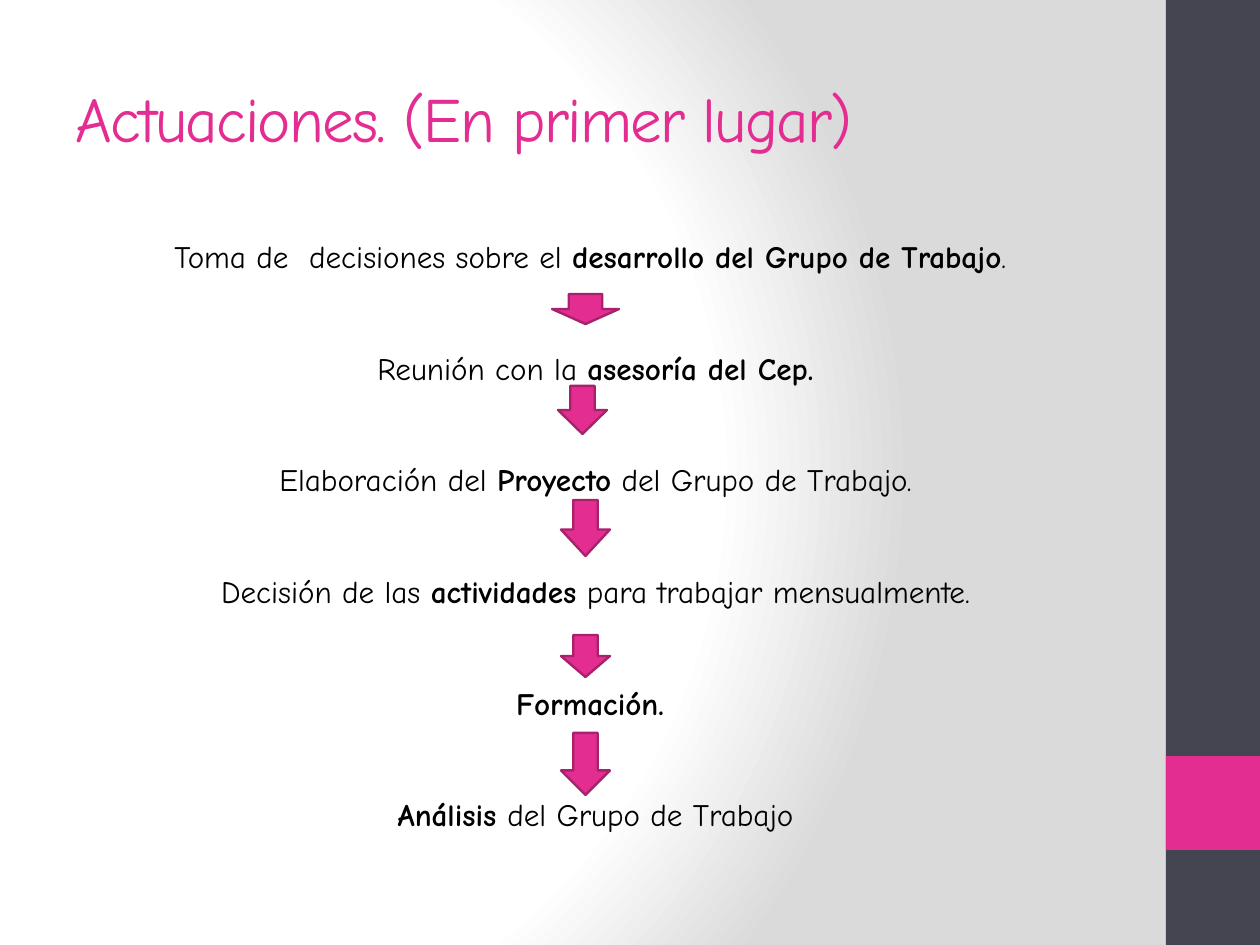
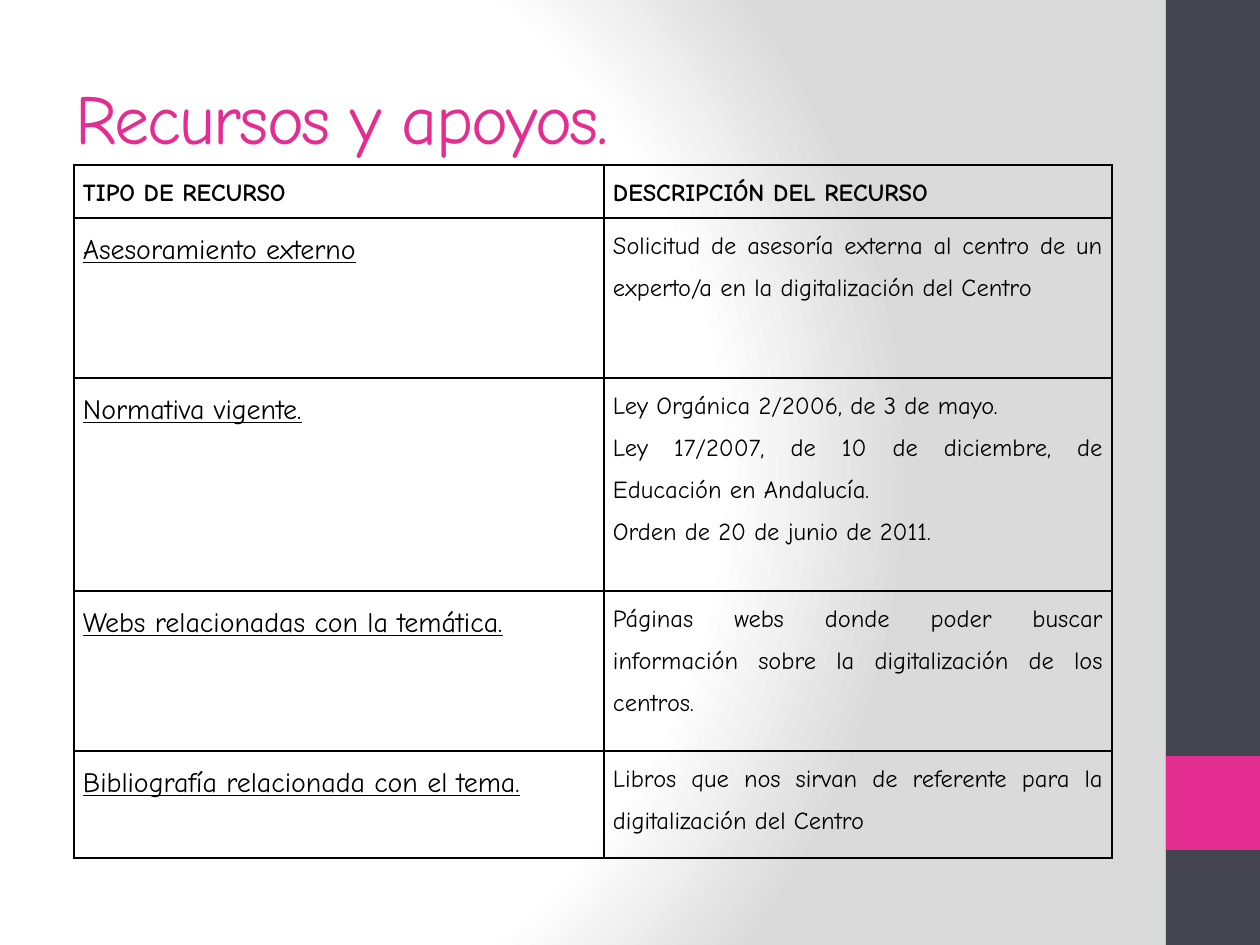
from pptx import Presentation
from pptx.dml.color import RGBColor
from pptx.enum.shapes import MSO_SHAPE
from pptx.enum.text import MSO_ANCHOR, MSO_AUTO_SIZE, PP_ALIGN
from pptx.oxml import parse_xml
from pptx.oxml.ns import nsdecls, qn
from pptx.util import Emu, Pt

RECTANGLE, DOWN_ARROW = MSO_SHAPE.RECTANGLE, MSO_SHAPE.DOWN_ARROW
LEFT, CENTER, JUSTIFY = PP_ALIGN.LEFT, PP_ALIGN.CENTER, PP_ALIGN.JUSTIFY
MIDDLE, TOP = MSO_ANCHOR.MIDDLE, MSO_ANCHOR.TOP
NO_AUTOFIT = MSO_AUTO_SIZE.NONE

PINK = RGBColor(0xE3, 0x2D, 0x91)
DARK_PINK = RGBColor(0xA8, 0x21, 0x6B)
SLATE = RGBColor(0x45, 0x45, 0x51)
BLACK = RGBColor(0, 0, 0)
WHITE = RGBColor(0xFF, 0xFF, 0xFF)
GREY = RGBColor(0xDA, 0xDA, 0xDA)
FONT = "Comic Neue"

# Content: a step is a list of (text, bold) spans
STEPS_TITLE = ("Actuaciones. (En primer lugar)", 36)
STEPS = [
    [("Toma de  decisiones sobre el ", False),
     ("desarrollo del Grupo de Trabajo", True), (". ", False)],
    [("Reunión con la ", False), ("asesoría del Cep.", True)],
    [("Elaboración del ", False), ("Proyecto", True),
     (" del Grupo de Trabajo.", False)],
    [("Decisión de las ", False), ("actividades", True),
     (" para trabajar mensualmente.", False)],
    [("Formación. ", True)],
    [("Análisis ", True), ("del Grupo de Trabajo", False)],
]
RESOURCES_TITLE = ("Recursos y apoyos.", 40)
RESOURCES_HEADER = ("TIPO DE RECURSO", "DESCRIPCIÓN DEL RECURSO")
RESOURCES = [
    ("Asesoramiento externo",
     ["Solicitud de asesoría externa al centro de un experto/a en la "
      "digitalización del Centro"]),
    ("Normativa vigente.",
     ["Ley Orgánica 2/2006, de 3 de mayo.",
      "Ley 17/2007, de 10 de diciembre, de Educación en Andalucía.",
      "Orden de 20 de junio de 2011."]),
    ("Webs relacionadas con la temática.",
     ["Páginas webs donde poder buscar información sobre la "
      "digitalización de los centros."]),
    ("Bibliografía relacionada con el tema.",
     ["Libros que nos sirvan de referente para la digitalización del Centro"]),
]

# Layout in px: left, top, width, height
PX_PER_INCH = 126
PAGE_SIZE = (1260, 945)
BANDS = [((1166, 0, 94, 945), SLATE), ((1166, 756, 94, 94), PINK)]
TITLE_AREA = (63, 38, 1050, 158)
STEPS_AREA = (63, 220, 1050, 662)
STEP_INDENT = 15
FIRST_GAP, STEP_GAP = Pt(4), Pt(36)
ARROWS = [(552, 294, 67, 30), (558, 386, 49, 48), (561, 500, 49, 56),
          (561, 635, 49, 42), (561, 733, 49, 62)]
LONG_HEAD_ARROW, LONG_HEAD = 2, 0.54
TABLE_CORNER = (74, 165)
COLUMN_WIDTHS = (530, 508)
ROW_HEIGHTS = (53, 160, 213, 160, 107)
CELL_INSET = 9


def px(length):
    return Emu(round(length * 914400 / PX_PER_INCH))


def set_all(target, **values):
    for name, value in values.items():
        setattr(target, name, value)


def place(box, area):
    set_all(box, **dict(zip(("left", "top", "width", "height"), map(px, area))))


def add_span(para, text, size, color=BLACK, **style):
    span = para.add_run()
    span.text = text
    set_all(span.font, name=FONT, size=Pt(size), **style)
    span.font.color.rgb = color


def add_filled(page, kind, area, fill, line=None):
    shape = page.shapes.add_shape(kind, *map(px, area))
    shape.shadow.inherit = False
    shape.fill.solid()
    shape.fill.fore_color.rgb = fill
    if line is None:
        shape.line.fill.background()
    else:
        shape.line.color.rgb = line
        shape.line.width = Pt(1.35)
    return shape


# Shared design
def style_master(deck, page):
    master = deck.slide_master
    content = master.element.find(qn("p:cSld"))
    content.remove(content.find(qn("p:bg")))
    stops = "".join(
        f'<a:gs pos="{position}000"><a:srgbClr val="{color}"/></a:gs>'
        for position, color in ((0, WHITE), (75, WHITE), (100, GREY)))
    content.insert(0, parse_xml(
        f'<p:bg {nsdecls("p", "a")}><p:bgPr><a:gradFill rotWithShape="1">'
        f'<a:gsLst>{stops}</a:gsLst><a:path path="circle">'
        '<a:fillToRect l="20000" t="50000" r="100000" b="50000"/></a:path>'
        '</a:gradFill><a:effectLst/></p:bgPr></p:bg>'))
    for order, (area, color) in enumerate(BANDS):
        band = add_filled(page, RECTANGLE, area, color).element
        next(band.iter(qn("p:cNvPr"))).set("id", str(20 + order))
        master.shapes.element.insert(2 + order, band)


def add_title(page, text, size):
    box = page.shapes.title
    place(box, TITLE_AREA)
    set_all(box.text_frame, auto_size=NO_AUTOFIT, word_wrap=True,
            vertical_anchor=MIDDLE)
    para = box.text_frame.paragraphs[0]
    para.alignment = LEFT
    add_span(para, text, size, PINK)
    for properties in box.element.iter(qn("a:rPr")):
        properties.set("spc", "-100")


# Steps joined by arrows
def fill_steps(page):
    add_title(page, *STEPS_TITLE)
    box = page.placeholders[1]
    place(box, STEPS_AREA)
    frame = box.text_frame
    set_all(frame, auto_size=NO_AUTOFIT, word_wrap=True, vertical_anchor=TOP)
    for number, step in enumerate(STEPS):
        para = frame.add_paragraph() if number else frame.paragraphs[0]
        set_all(para, alignment=CENTER, line_spacing=1.3,
                space_before=STEP_GAP if number else FIRST_GAP)
        for text, bold in step:
            add_span(para, text, 17.8, bold=bold)
    for para in box.element.iter(qn("a:pPr")):
        para.set("marL", str(px(STEP_INDENT)))
        para.set("indent", "0")
        para.append(parse_xml(f'<a:buNone {nsdecls("a")}/>'))
    for number, area in enumerate(ARROWS):
        arrow = add_filled(page, DOWN_ARROW, area, PINK, DARK_PINK)
        if number == LONG_HEAD_ARROW:
            arrow.adjustments[1] = LONG_HEAD


# Resources table
def fill_cell(cell, lines, size, **style):
    set_all(cell, margin_left=px(CELL_INSET), margin_right=px(CELL_INSET),
            margin_top=0, margin_bottom=0, vertical_anchor=TOP)
    properties = cell._tc.get_or_add_tcPr()
    for side in "LRTB":
        properties.append(parse_xml(
            f'<a:ln{side} {nsdecls("a")} w="{Pt(1)}"><a:solidFill>'
            f'<a:srgbClr val="{BLACK}"/></a:solidFill></a:ln{side}>'))
    cell.fill.background()
    frame = cell.text_frame
    for number, line in enumerate(lines):
        para = frame.add_paragraph() if number else frame.paragraphs[0]
        set_all(para, alignment=JUSTIFY, line_spacing=1.5)
        add_span(para, line, size, **style)


def fill_resources(page):
    add_title(page, *RESOURCES_TITLE)
    area = TABLE_CORNER + (sum(COLUMN_WIDTHS), sum(ROW_HEIGHTS))
    table = page.shapes.add_table(
        len(ROW_HEIGHTS), len(COLUMN_WIDTHS), *map(px, area)).table
    set_all(table, first_row=False, horz_banding=False)
    for column, width in zip(table.columns, COLUMN_WIDTHS):
        column.width = px(width)
    for row, height in zip(table.rows, ROW_HEIGHTS):
        row.height = px(height)
    for column, heading in enumerate(RESOURCES_HEADER):
        fill_cell(table.cell(0, column), [heading], 14, bold=True)
    for row, (resource, description) in enumerate(RESOURCES, start=1):
        fill_cell(table.cell(row, 0), [resource], 16, underline=True)
        fill_cell(table.cell(row, 1), description, 14)


def main():
    deck = Presentation()
    deck.slide_width, deck.slide_height = map(px, PAGE_SIZE)
    title_and_content, title_only = deck.slide_layouts[1], deck.slide_layouts[5]
    steps_page = deck.slides.add_slide(title_and_content)
    style_master(deck, steps_page)
    fill_steps(steps_page)
    fill_resources(deck.slides.add_slide(title_only))
    deck.save("out.pptx")


if __name__ == "__main__":
    main()
